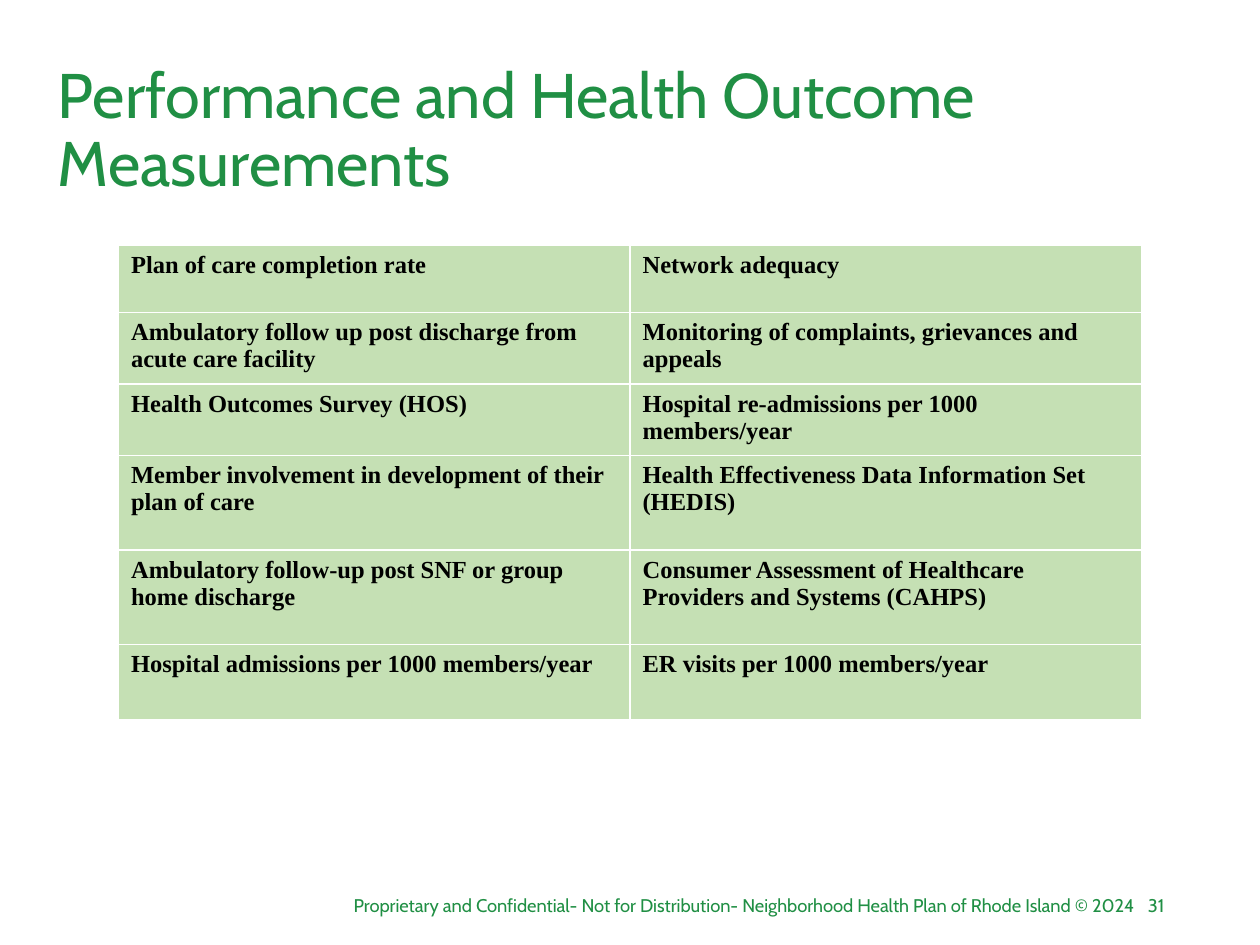
from dataclasses import dataclass

from lxml import etree
from pptx import Presentation
from pptx import util as u
from pptx.dml import color
from pptx.enum import text
from pptx.oxml import ns


@dataclass(frozen=True)
class Theme:
    green: str = "208F44"
    cell: str = "C5E0B4"
    border: str = "FFFFFF"
    ink: str = "000000"
    heading_font: str = "Cabin"
    table_font: str = "Times New Roman"
    title_size: float = 36
    table_size: float = 14
    footer_size: float = 10.5
    border_width: float = 1


THEME = Theme()
TITLE_FORMAT = {"name": THEME.heading_font, "size": u.Pt(THEME.title_size)}
FOOTER_FORMAT = {"name": THEME.heading_font, "size": u.Pt(THEME.footer_size)}
MEASURE_FORMAT = {"name": THEME.table_font, "size": u.Pt(THEME.table_size), "bold": True}

MEASURES = [
    ("Plan of care completion rate", "Network adequacy"),
    ("Ambulatory follow up post discharge from acute care facility",
     "Monitoring of complaints, grievances and appeals"),
    ("Health Outcomes Survey (HOS)", "Hospital re-admissions per 1000 members/year"),
    ("Member involvement in development of their plan of care",
     "Health Effectiveness Data Information Set (HEDIS)"),
    ("Ambulatory follow-up post SNF or group home discharge",
     "Consumer Assessment of Healthcare Providers and Systems (CAHPS)"),
    ("Hospital admissions per 1000 members/year", "ER visits per 1000 members/year"),
]
ROW_HEIGHTS = [0.53, 0.55, 0.53, 0.75, 0.75, 0.6]
CONFIDENTIALITY = ("Proprietary and Confidential- Not for Distribution- "
                   "Neighborhood Health Plan of Rhode Island © 2024")


def write(paragraph, wording, font_format, ink):
    run = paragraph.add_run()
    run.text = wording
    for key, value in font_format.items():
        setattr(run.font, key, value)
    run.font.color.rgb = color.RGBColor.from_string(ink)


def add_text(slide, box, wording, font_format, frame_format, paragraph_format):
    frame = slide.shapes.add_textbox(*map(u.Inches, box)).text_frame
    for key, value in {"word_wrap": True, **frame_format}.items():
        setattr(frame, key, value)
    paragraph = frame.paragraphs[0]
    for key, value in paragraph_format.items():
        setattr(paragraph, key, value)
    write(paragraph, wording, font_format, THEME.green)


def add_title(slide, box):
    add_text(slide, box, "Performance and Health Outcome Measurements", TITLE_FORMAT,
             {"vertical_anchor": text.MSO_ANCHOR.MIDDLE}, {"line_spacing": 0.9})


def add_footer(slide, box):
    left, top, width, height = box
    notice_width, number_width = 6.61, 0.46
    number_left = left + width - number_width
    for wording, part_left, part_width in (
        (CONFIDENTIALITY, left, notice_width),
        ("31", number_left, number_width),
    ):
        add_text(slide, (part_left, top, part_width, height), wording, FOOTER_FORMAT,
                 {"auto_size": text.MSO_AUTO_SIZE.SHAPE_TO_FIT_TEXT},
                 {"alignment": text.PP_ALIGN.RIGHT})


def add_borders(cell):
    properties = cell._tc.get_or_add_tcPr()
    for index, side in enumerate(("lnL", "lnR", "lnT", "lnB")):
        line = etree.Element(ns.qn(f"a:{side}"), w=str(u.Pt(THEME.border_width)))
        fill = etree.SubElement(line, ns.qn("a:solidFill"))
        etree.SubElement(fill, ns.qn("a:srgbClr"), val=THEME.border)
        properties.insert(index, line)


def add_measures(slide, box):
    columns = len(MEASURES[0])
    table = slide.shapes.add_table(len(MEASURES), columns, *map(u.Inches, box)).table
    table.first_row = table.horz_banding = False
    for column in table.columns:
        column.width = u.Inches(box[2] / columns)
    for row, height, measures in zip(table.rows, ROW_HEIGHTS, MEASURES):
        row.height = u.Inches(height)
        for cell, measure in zip(row.cells, measures):
            cell.fill.solid()
            cell.fill.fore_color.rgb = color.RGBColor.from_string(THEME.cell)
            add_borders(cell)
            write(cell.text_frame.paragraphs[0], measure, MEASURE_FORMAT, THEME.ink)


def main():
    deck = Presentation()
    deck.slide_width, deck.slide_height = u.Inches(10), u.Inches(7.5)
    slide = deck.slides.add_slide(deck.slide_layouts[6])
    add_footer(slide, (2.5, 7.05, 6.84, 0.28))
    add_title(slide, (0.36, 0.32, 8.62, 1.45))
    add_measures(slide, (0.94, 1.95, 8.12, sum(ROW_HEIGHTS)))
    deck.save("out.pptx")


if __name__ == "__main__":
    main()
